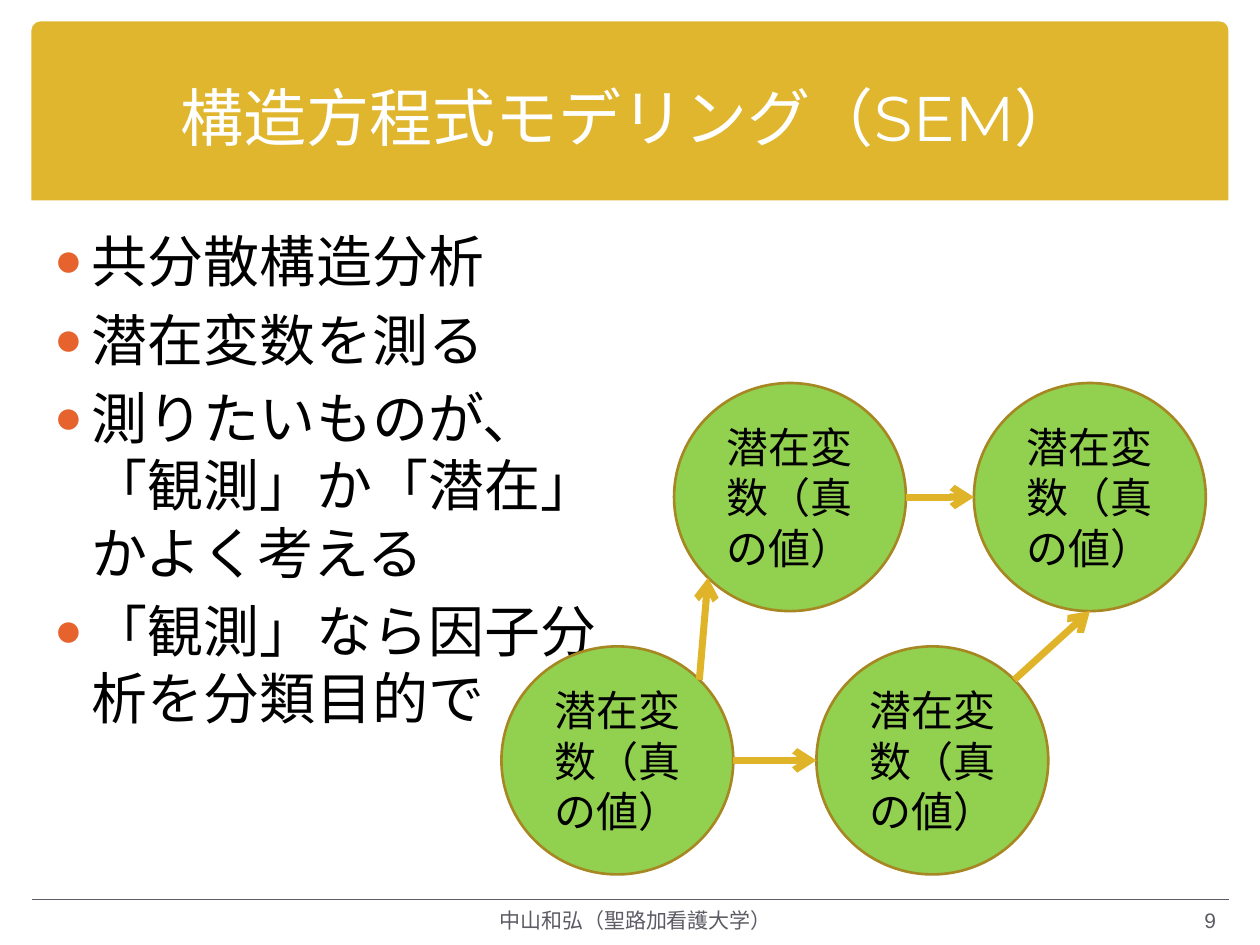
from math import sqrt

from lxml import etree
from pptx import Presentation
from pptx.dml.color import RGBColor
from pptx.enum.shapes import MSO_CONNECTOR, MSO_SHAPE
from pptx.enum.text import MSO_ANCHOR, MSO_AUTO_SIZE, PP_ALIGN
from pptx.oxml.ns import qn
from pptx.util import Inches, Pt

STRAIGHT = MSO_CONNECTOR.STRAIGHT
OVAL, BANNER = MSO_SHAPE.OVAL, MSO_SHAPE.ROUND_2_SAME_RECTANGLE
LEFT, CENTER, RIGHT = PP_ALIGN.LEFT, PP_ALIGN.CENTER, PP_ALIGN.RIGHT
TOP, MIDDLE = MSO_ANCHOR.TOP, MSO_ANCHOR.MIDDLE

GOLD = RGBColor(0xE0, 0xB6, 0x2E)
ARROW_GOLD = RGBColor(0xDF, 0xB4, 0x29)
BROWN = RGBColor(0xA6, 0x87, 0x22)
GREEN = RGBColor(0x92, 0xD0, 0x50)
ORANGE = RGBColor(0xE6, 0x63, 0x2E)
GRAY = RGBColor(0x5D, 0x5C, 0x64)
BLACK = RGBColor(0, 0, 0)
WHITE = RGBColor(0xFF, 0xFF, 0xFF)

TITLE = "構造方程式モデリング（SEM）"
POINTS = [
    "共分散構造分析",
    "潜在変数を測る",
    "測りたいものが、「観測」か「潜在」かよく考える",
    "「観測」なら因子分析を分類目的で",
]
FOOTERS = [
    ("中山和弘（聖路加看護大学）", 3.17, 3.75, CENTER),
    ("9", 7.42, 2.33, RIGHT),
]
LATENT = "潜在変数（真の値）"
LATENT_WIDTH, LATENT_HEIGHT = 1.84, 1.81
LATENTS = {
    "lower right": (6.48, 5.13),
    "upper left": (5.35, 3.04),
    "lower left": (3.98, 5.13),
    "upper right": (7.73, 3.04),
}
DIAGONAL = sqrt(0.5)
EDGES = {
    "left": (-1, 0),
    "right": (1, 0),
    "bottom": (0, 1),
    "top right": (DIAGONAL, -DIAGONAL),
    "bottom left": (-DIAGONAL, DIAGONAL),
}
PATHS = [
    ("lower left", "top right", "upper left", "bottom left"),
    ("lower left", "right", "lower right", "left"),
    ("upper left", "right", "upper right", "left"),
    ("lower right", "top right", "upper right", "bottom"),
]


def place(shape, left, top, width, height):
    shape.left, shape.top = Inches(left), Inches(top)
    shape.width, shape.height = Inches(width), Inches(height)


def write(shape, *lines, size, color=BLACK, font="Arial", align=LEFT, anchor=MIDDLE):
    frame = shape.text_frame
    frame.word_wrap = True
    frame.auto_size = MSO_AUTO_SIZE.NONE
    frame.vertical_anchor = anchor
    for index, line in enumerate(lines):
        para = frame.add_paragraph() if index else frame.paragraphs[0]
        para.alignment = align
        span = para.add_run()
        span.text = line
        span.font.size, span.font.name = Pt(size), font
        span.font.color.rgb = color


def add_bullet(para):
    para.space_before = Pt(6.4)
    props = para._p.get_or_add_pPr()
    props.set("marL", str(Inches(0.3)))
    props.set("indent", str(Inches(-0.3)))
    color = etree.SubElement(props, qn("a:buClr"))
    etree.SubElement(color, qn("a:srgbClr"), val=str(ORANGE))
    etree.SubElement(props, qn("a:buSzPct"), val="85000")
    etree.SubElement(props, qn("a:buFont"), typeface="Arial")
    etree.SubElement(props, qn("a:buChar"), char="●")


def add_line(page, start, end, color, width, arrow=False):
    line = page.shapes.add_connector(STRAIGHT, *map(Inches, start + end))
    line.line.color.rgb = color
    line.line.width = Pt(width)
    if arrow:
        etree.SubElement(line.line._get_or_add_ln(), qn("a:tailEnd"), type="arrow")
    etree.SubElement(line._element.spPr, qn("a:effectLst"))


def edge_point(name, edge):
    left, top = LATENTS[name]
    across, down = EDGES[edge]
    return (left + LATENT_WIDTH / 2 * (1 + across),
            top + LATENT_HEIGHT / 2 * (1 + down))


def main():
    deck = Presentation()
    deck.slide_width, deck.slide_height = Inches(10), Inches(7.5)
    page = deck.slides.add_slide(deck.slide_layouts[1])
    title, body = page.placeholders

    banner = page.shapes.add_shape(BANNER, *map(Inches, (0.25, 0.17, 9.5, 1.42)))
    banner.adjustments[0] = 0.05
    banner.shadow.inherit = False
    banner.fill.solid()
    banner.fill.fore_color.rgb = GOLD
    banner.line.fill.background()
    title.element.addprevious(banner.element)

    place(title, 0.33, 0.3, 9.33, 1.25)
    write(title, TITLE, size=36, color=WHITE, font="Montserrat", align=CENTER)
    place(body, 0.33, 1.75, 4.55, 5.2)
    write(body, *POINTS, size=32, anchor=TOP)
    for para in body.text_frame.paragraphs:
        add_bullet(para)

    add_line(page, (0.25, 7.14), (9.75, 7.14), GRAY, 1)
    for text, left, width, align in FOOTERS:
        box = page.shapes.add_textbox(*map(Inches, (left, 7.13, width, 0.35)))
        write(box, text, size=12, color=GRAY, align=align)

    for left, top in LATENTS.values():
        circle = page.shapes.add_shape(
            OVAL, *map(Inches, (left, top, LATENT_WIDTH, LATENT_HEIGHT)))
        circle.shadow.inherit = False
        circle.fill.solid()
        circle.fill.fore_color.rgb = GREEN
        circle.line.color.rgb = BROWN
        circle.line.width = Pt(1.5)
        write(circle, LATENT, size=24, align=CENTER)

    for source, source_edge, target, target_edge in PATHS:
        add_line(page, edge_point(source, source_edge),
                 edge_point(target, target_edge), ARROW_GOLD, 4, arrow=True)

    deck.save("out.pptx")


if __name__ == "__main__":
    main()
